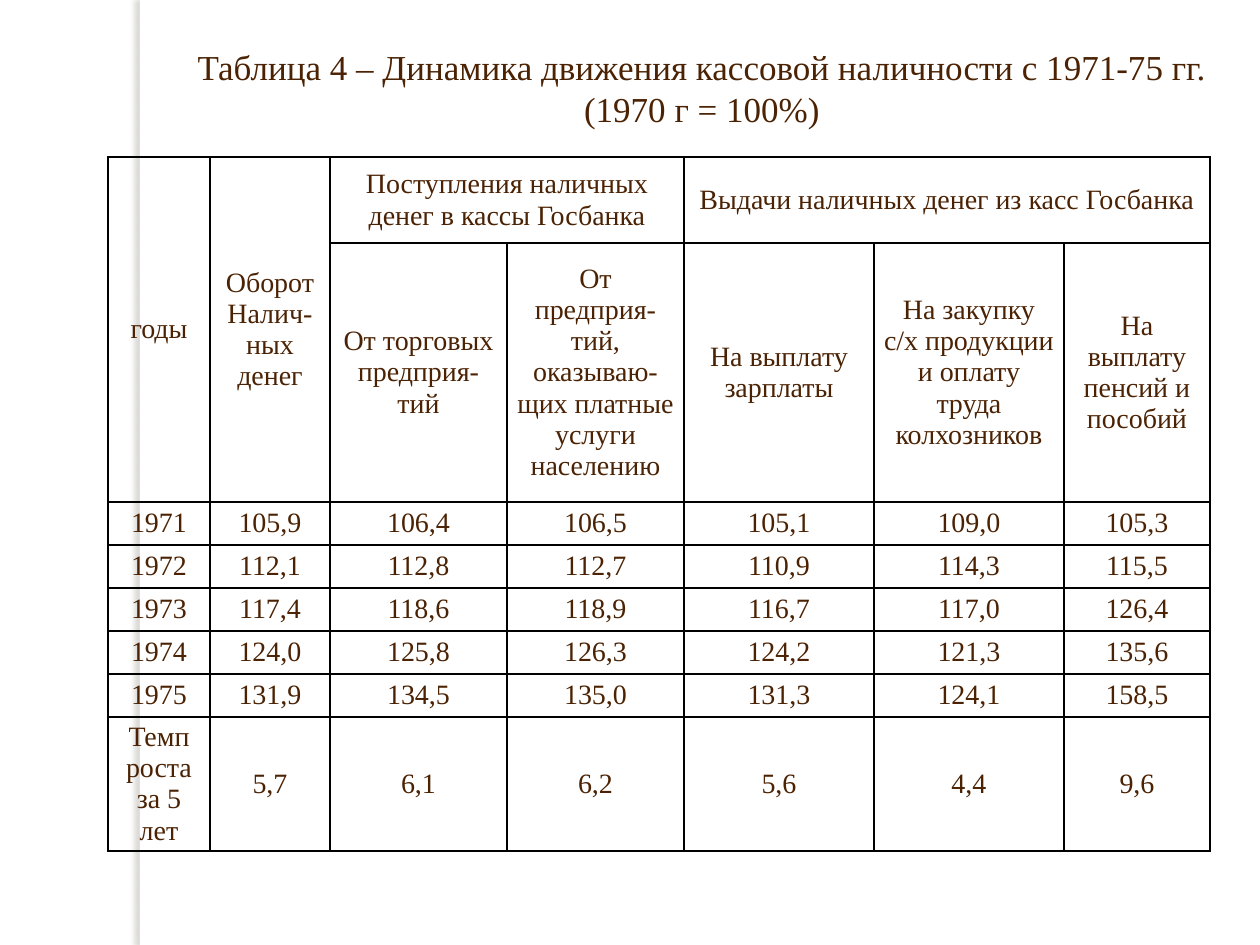
from lxml import etree
from pptx import Presentation
from pptx import util as u
from pptx.dml.color import RGBColor
from pptx.enum import shapes, text
from pptx.oxml import ns

COLORS = {"text": "4B2203", "border": "000000", "strip": "FFFFFF", "shadow": "736F63"}
FONT = "Times New Roman"
SCALE = 914400 / 126

TITLE = "Таблица 4 – Динамика движения кассовой наличности с 1971-75 гг.\n(1970 г = 100%)"
GROUPS = [
    "годы", "Оборот\nНалич-ных денег",
    "Поступления наличных денег в кассы Госбанка", "",
    "Выдачи наличных денег из касс Госбанка", "", "",
]
HEADERS = [
    "", "", "От торговых предприя-тий",
    "От предприя-тий, оказываю-щих платные услуги населению",
    "На выплату зарплаты",
    "На закупку с/х продукции и оплату труда колхозников",
    "На выплату пенсий и пособий",
]
DATA = [
    ["1971", "105,9", "106,4", "106,5", "105,1", "109,0", "105,3"],
    ["1972", "112,1", "112,8", "112,7", "110,9", "114,3", "115,5"],
    ["1973", "117,4", "118,6", "118,9", "116,7", "117,0", "126,4"],
    ["1974", "124,0", "125,8", "126,3", "124,2", "121,3", "135,6"],
    ["1975", "131,9", "134,5", "135,0", "131,3", "124,1", "158,5"],
    ["Темп роста за 5 лет", "5,7", "6,1", "6,2", "5,6", "4,4", "9,6"],
]
MERGES = [((0, 0), (1, 0)), ((0, 1), (1, 1)), ((0, 2), (0, 3)), ((0, 4), (0, 6))]
COLUMNS = [102, 120, 177, 177, 190, 190, 146]
ROWS = [86, 259] + [43] * 5 + [134]
PLACES = {
    "strip": (140, 0, 10, 945),
    "table": (108, 157, sum(COLUMNS), sum(ROWS)),
    "title": (118, 39, 1106, 97),
}
CELL_FORMAT = {
    "vertical_anchor": text.MSO_ANCHOR.MIDDLE,
    "margin_left": u.Inches(0.07), "margin_right": u.Inches(0.07),
    "margin_top": 0, "margin_bottom": 0,
}
TITLE_FORMAT = {
    "vertical_anchor": text.MSO_ANCHOR.MIDDLE,
    "word_wrap": False,
    "auto_size": text.MSO_AUTO_SIZE.SHAPE_TO_FIT_TEXT,
}


def px(value):
    return u.Emu(round(value * SCALE))


def place(name):
    return [px(value) for value in PLACES[name]]


def apply(target, values):
    for name, value in values.items():
        setattr(target, name, value)


def add_element(parent, tag, **attributes):
    return etree.SubElement(parent, ns.qn(tag), attributes)


def add_color(parent, name):
    fill = add_element(parent, "a:solidFill")
    return add_element(fill, "a:srgbClr", val=COLORS[name])


def write(frame, content, size):
    frame.text = content
    for para in frame.paragraphs:
        para.alignment = text.PP_ALIGN.CENTER
        for span in para.runs:
            apply(span.font, {"name": FONT, "size": u.Pt(size)})
            span.font.color.rgb = RGBColor.from_string(COLORS["text"])


def add_strip(page):
    strip = page.shapes.add_shape(shapes.MSO_SHAPE.RECTANGLE, *place("strip"))
    strip.fill.solid()
    strip.fill.fore_color.rgb = RGBColor.from_string(COLORS["strip"])
    strip.line.fill.background()
    effects = add_element(strip.element.spPr, "a:effectLst")
    shadow = add_element(effects, "a:outerShdw", blurRad=str(u.Pt(3)),
                         dist=str(u.Pt(3)), dir=str(180 * 60000))
    color = add_element(shadow, "a:srgbClr", val=COLORS["shadow"])
    add_element(color, "a:alpha", val="25000")


def add_table(page):
    rows = [GROUPS, HEADERS] + DATA
    table = page.shapes.add_table(len(rows), len(COLUMNS), *place("table")).table
    apply(table, {"first_row": False, "horz_banding": False})
    for column, width in zip(table.columns, COLUMNS):
        column.width = px(width)
    for row, height in zip(table.rows, ROWS):
        row.height = px(height)
    for row, contents in zip(table.rows, rows):
        for cell, content in zip(row.cells, contents):
            write(cell.text_frame, content, 16)
            apply(cell, CELL_FORMAT)
            properties = cell._tc.get_or_add_tcPr()
            for side in ("L", "R", "T", "B"):
                add_color(add_element(properties, f"a:ln{side}", w=str(u.Pt(1))), "border")
            cell.fill.background()
    for first, last in MERGES:
        table.cell(*first).merge(table.cell(*last))


def set_title(page):
    title = page.shapes.title
    apply(title, dict(zip(("left", "top", "width", "height"), place("title"))))
    write(title.text_frame, TITLE, 20)
    apply(title.text_frame, TITLE_FORMAT)
    for para in title.text_frame.paragraphs:
        para._p.get_or_add_pPr().set("indent", str(u.Inches(0.49)))


def main():
    deck = Presentation()
    apply(deck, {"slide_width": u.Inches(10), "slide_height": u.Inches(7.5)})
    page = deck.slides.add_slide(deck.slide_layouts[5])
    add_strip(page)
    add_table(page)
    set_title(page)
    deck.save("out.pptx")


if __name__ == "__main__":
    main()
